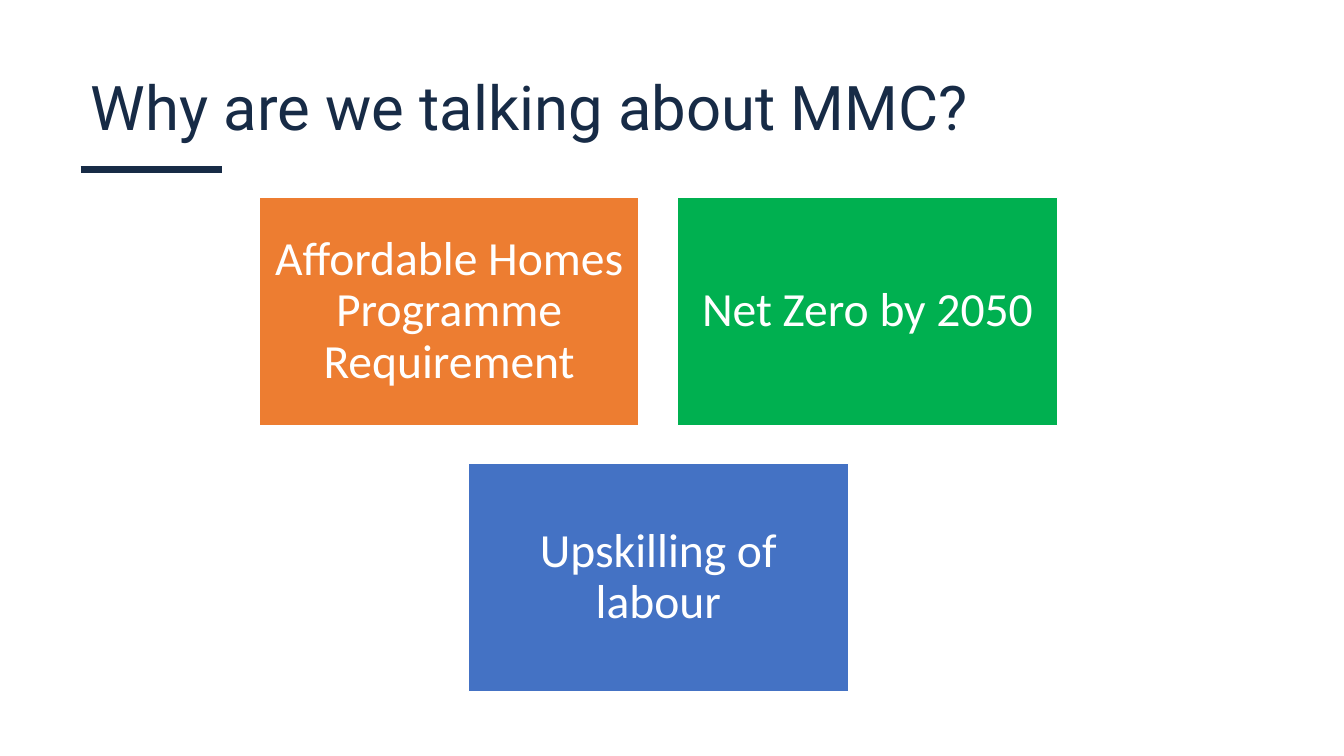
from dataclasses import dataclass

from lxml import etree
from pptx import Presentation
from pptx.dml.color import RGBColor
from pptx.enum.shapes import MSO_CONNECTOR, MSO_SHAPE
from pptx.enum.text import MSO_ANCHOR, MSO_AUTO_SIZE, PP_ALIGN
from pptx.oxml.ns import qn
from pptx.util import Inches, Pt


@dataclass(frozen=True)
class Theme:
    navy: str = "172B46"
    white: str = "FFFFFF"
    orange: str = "ED7D31"
    green: str = "00B050"
    blue: str = "4472C4"
    title_font: str = "Roboto"
    body_font: str = "Calibri"
    title_size: int = 44
    card_size: int = 34
    rule_width: int = 5
    border_width: int = 1


THEME = Theme()
CARD_W, CARD_H, GAP = 3.77, 2.26, 0.38
CARDS_CENTER, CARDS_TOP = 6.53, 1.96
CARD_ROWS = [
    [("Affordable Homes Programme Requirement", THEME.orange),
     ("Net Zero by 2050", THEME.green)],
    [("Upskilling of labour", THEME.blue)],
]


def rgb(color):
    return RGBColor.from_string(color)


def write_text(tf, text, font, size, color, anchor):
    tf.text = text
    tf.word_wrap = True
    tf.auto_size = MSO_AUTO_SIZE.NONE
    tf.vertical_anchor = anchor
    p = tf.paragraphs[0]
    p.alignment = PP_ALIGN.CENTER
    p.line_spacing = 0.9
    p.space_before = Pt(0)
    r = p.runs[0]
    r.font.name = font
    r.font.size = Pt(size)
    r.font.color.rgb = rgb(color)


def add_title(s, text):
    sp = s.shapes.title
    sp.left, sp.top = Inches(0), Inches(0.72)
    sp.width, sp.height = Inches(10.51), Inches(1.24)
    write_text(sp.text_frame, text, THEME.title_font, THEME.title_size,
               THEME.navy, MSO_ANCHOR.TOP)


def add_rule(s, left, right, y):
    rule = s.shapes.add_connector(MSO_CONNECTOR.STRAIGHT, Inches(left), Inches(y),
                                  Inches(right), Inches(y))
    rule.line.color.rgb = rgb(THEME.navy)
    rule.line.width = Pt(THEME.rule_width)
    etree.SubElement(rule._element.spPr, qn("a:effectLst"))


def add_card(s, left, top, text, color):
    sp = s.shapes.add_shape(MSO_SHAPE.RECTANGLE, Inches(left), Inches(top),
                            Inches(CARD_W), Inches(CARD_H))
    sp.shadow.inherit = False
    sp.fill.solid()
    sp.fill.fore_color.rgb = rgb(color)
    sp.line.color.rgb = rgb(THEME.white)
    sp.line.width = Pt(THEME.border_width)
    tf = sp.text_frame
    tf.margin_left = tf.margin_right = Inches(0.14)
    tf.margin_top = tf.margin_bottom = Inches(0.14)
    write_text(tf, text, THEME.body_font, THEME.card_size, THEME.white,
               MSO_ANCHOR.MIDDLE)


def add_cards(s, rows):
    for i, row in enumerate(rows):
        row_width = len(row) * CARD_W + (len(row) - 1) * GAP
        left = CARDS_CENTER - row_width / 2
        top = CARDS_TOP + i * (CARD_H + GAP)
        for j, (text, color) in enumerate(row):
            add_card(s, left + j * (CARD_W + GAP), top, text, color)


def main():
    prs = Presentation()
    prs.slide_width, prs.slide_height = Inches(13.33), Inches(7.5)
    s = prs.slides.add_slide(prs.slide_layouts[5])
    add_title(s, "Why are we talking about MMC?")
    add_rule(s, 0.8, 2.2, 1.68)
    add_cards(s, CARD_ROWS)
    prs.save("out.pptx")


if __name__ == "__main__":
    main()
